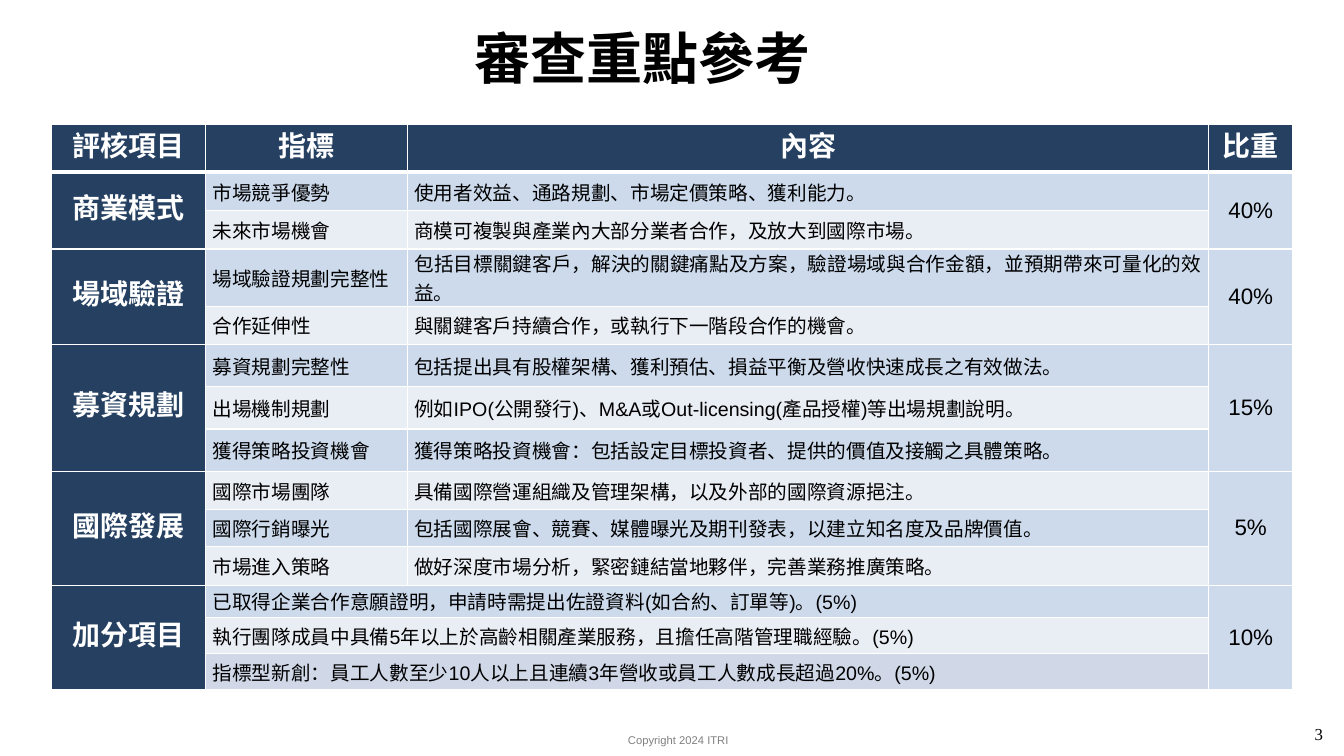
import pptx
import pptx.util
import pptx.dml.color
import pptx.enum.text
import pptx.oxml
import pptx.oxml.ns

Inches = pptx.util.Inches
Pt = pptx.util.Pt
ALIGN = pptx.enum.text.PP_ALIGN
MIDDLE = pptx.enum.text.MSO_ANCHOR.MIDDLE

THEME = {
    "navy": "254061", "blue": "CCDAEC", "pale": "E9EDF4", "lavender": "D0D8E8",
    "white": "FFFFFF", "black": "000000", "gray": "808080",
    "sans": "Arial", "serif": "Times New Roman",
    "title": 40, "heading": 20, "weight": 16, "body": 14, "number": 12, "footer": 8,
}


def write(frame, text, size, align, color="black", bold=False, font="sans"):
    frame.text = text
    paragraph = frame.paragraphs[0]
    paragraph.alignment = ALIGN[align]
    run_font = paragraph.runs[0].font
    run_font.name = THEME[font]
    run_font.size = Pt(THEME[size])
    run_font.bold = bold
    run_font.color.rgb = pptx.dml.color.RGBColor.from_string(THEME[color])
    return paragraph


def paint(cell, color, top=1, bottom=1):
    cell.vertical_anchor = MIDDLE
    cell.margin_left = cell.margin_right = Inches(0.07)
    cell.margin_top = cell.margin_bottom = 0
    properties = cell._tc.get_or_add_tcPr()
    for side, width in (("L", 1), ("R", 1), ("T", top), ("B", bottom)):
        properties.append(pptx.oxml.parse_xml(
            f'<a:ln{side} {pptx.oxml.ns.nsdecls("a")} w="{Pt(width)}"><a:solidFill>'
            f'<a:srgbClr val="{THEME["white"]}"/></a:solidFill></a:ln{side}>'))
    cell.fill.solid()
    cell.fill.fore_color.rgb = pptx.dml.color.RGBColor.from_string(THEME[color])


headings = ["評核項目", "指標", "內容", "比重"]
criteria = [
    ("商業模式", "40%", [
        ("市場競爭優勢", "使用者效益、通路規劃、市場定價策略、獲利能力。"),
        ("未來市場機會", "商模可複製與產業內大部分業者合作，及放大到國際市場。"),
    ]),
    ("場域驗證", "40%", [
        ("場域驗證規劃完整性", "包括目標關鍵客戶，解決的關鍵痛點及方案，驗證場域與合作金額，並預期帶來可量化的效益。"),
        ("合作延伸性", "與關鍵客戶持續合作，或執行下一階段合作的機會。"),
    ]),
    ("募資規劃", "15%", [
        ("募資規劃完整性", "包括提出具有股權架構、獲利預估、損益平衡及營收快速成長之有效做法。"),
        ("出場機制規劃", "例如IPO(公開發行)、M&A或Out-licensing(產品授權)等出場規劃說明。"),
        ("獲得策略投資機會", "獲得策略投資機會：包括設定目標投資者、提供的價值及接觸之具體策略。"),
    ]),
    ("國際發展", "5%", [
        ("國際市場團隊", "具備國際營運組織及管理架構，以及外部的國際資源挹注。"),
        ("國際行銷曝光", "包括國際展會、競賽、媒體曝光及期刊發表，以建立知名度及品牌價值。"),
        ("市場進入策略", "做好深度市場分析，緊密鏈結當地夥伴，完善業務推廣策略。"),
    ]),
    ("加分項目", "10%", [
        ("已取得企業合作意願證明，申請時需提出佐證資料(如合約、訂單等)。(5%)",),
        ("執行團隊成員中具備5年以上於高齡相關產業服務，且擔任高階管理職經驗。(5%)",),
        ("指標型新創：員工人數至少10人以上且連續3年營收或員工人數成長超過20%。(5%)",),
    ]),
]
column_widths = [1.53, 2, 7.95, 0.83]
row_heights = [0.48, 0.38, 0.38, 0.54, 0.38, 0.42, 0.42, 0.42, 0.38, 0.37, 0.38, 0.32, 0.36, 0.36]

presentation = pptx.Presentation()
presentation.slide_width = Inches(13.33)
presentation.slide_height = Inches(7.5)
slide = presentation.slides.add_slide(presentation.slide_layouts[5])

title = slide.shapes.title
title.left, title.top, title.width, title.height = map(Inches, (1.81, 0.15, 9.12, 0.69))
title.text_frame.vertical_anchor = MIDDLE
write(title.text_frame, "審查重點參考", "title", "CENTER", bold=True).line_spacing = 1.2

review = slide.shapes.add_table(
    len(row_heights), len(column_widths),
    Inches(0.51), Inches(1.23), Inches(12.31), Inches(sum(row_heights))).table
for column, width in zip(review.columns, column_widths):
    column.width = Inches(width)
for row, height in zip(review.rows, row_heights):
    row.height = Inches(height)

last_row = len(row_heights) - 1
for r in range(len(row_heights)):
    stripe = "lavender" if r == last_row else "blue" if r % 2 else "pale"
    for c in range(len(column_widths)):
        color = "navy" if r == 0 or c == 0 else "blue" if c == 3 else stripe
        paint(review.cell(r, c), color, top=3 if r == 1 else 1, bottom=3 if r == 0 else 1)

for c, heading in enumerate(headings):
    write(review.cell(0, c).text_frame, heading, "heading", "CENTER", "white", True).line_spacing = Pt(23)

first = 1
for item, weight, indicators in criteria:
    last = first + len(indicators) - 1
    for c, text, style in ((0, item, ("heading", "CENTER", "white", True)),
                           (3, weight, ("weight", "CENTER"))):
        review.cell(first, c).merge(review.cell(last, c))
        paragraph = write(review.cell(first, c).text_frame, text, *style)
        if c == 0:
            paragraph.line_spacing = Pt(23)
    for r, texts in enumerate(indicators, first):
        if len(texts) == 1:
            review.cell(r, 1).merge(review.cell(r, 2))
        for c, text in enumerate(texts, 1):
            write(review.cell(r, c).text_frame, text, "body", "JUSTIFY")
    first = last + 1

copyright_line = slide.shapes.add_textbox(Inches(6.13), Inches(7.23), Inches(1.21), Inches(0.24))
copyright_line.text_frame.word_wrap = False
write(copyright_line.text_frame, "Copyright 2024 ITRI", "footer", "LEFT", "gray")

page_number = slide.shapes.add_textbox(Inches(12.65), Inches(7.13), Inches(0.57), Inches(0.33))
page_number.text_frame.word_wrap = True
write(page_number.text_frame, "3", "number", "RIGHT", font="serif")

presentation.save("out.pptx")
